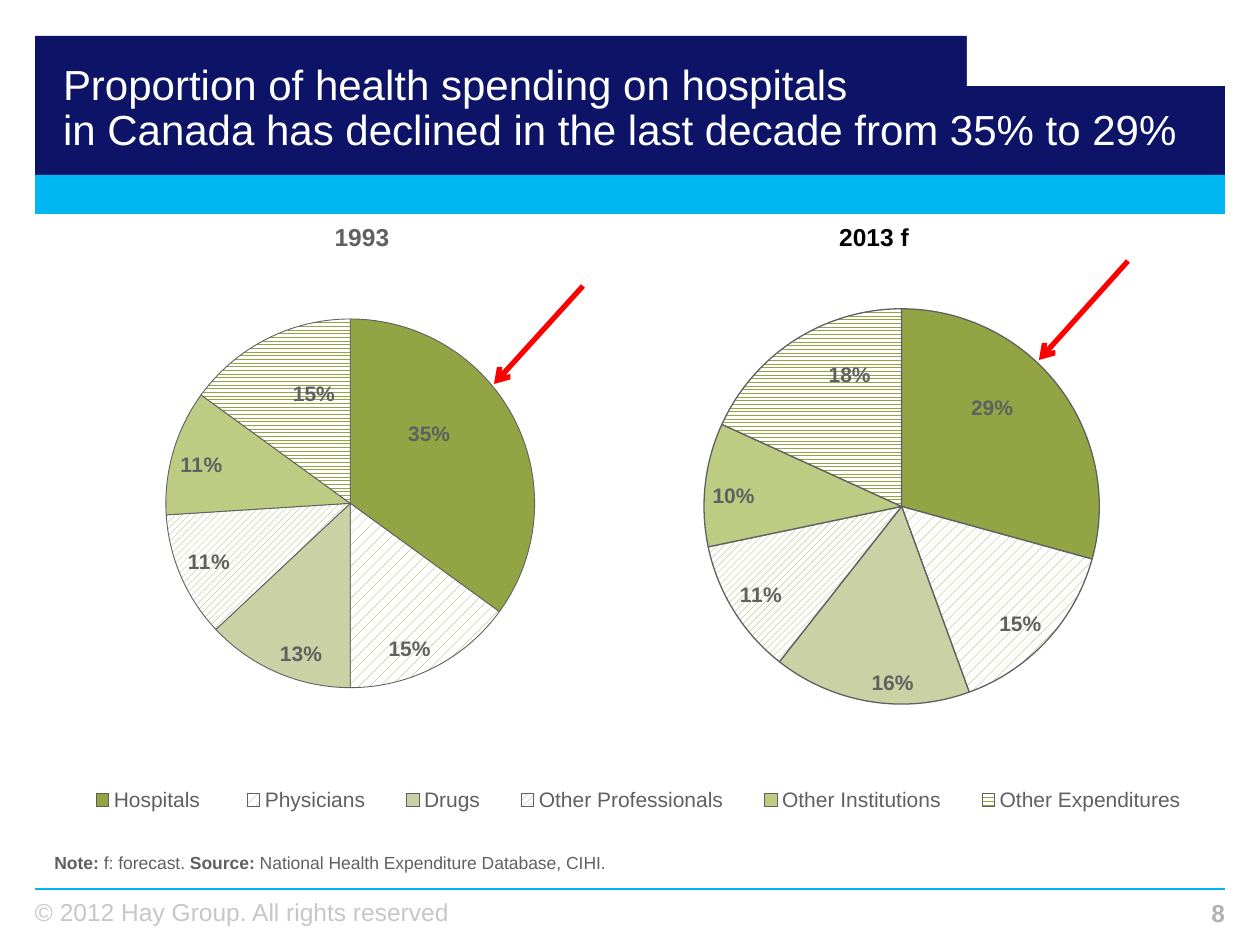
from lxml import etree
from pptx import Presentation
from pptx.chart.data import CategoryChartData
from pptx.dml.color import RGBColor
from pptx.enum.chart import XL_CHART_TYPE, XL_LABEL_POSITION, XL_LEGEND_POSITION
from pptx.enum.dml import MSO_PATTERN
from pptx.enum.shapes import MSO_CONNECTOR, MSO_SHAPE
from pptx.enum.text import MSO_ANCHOR, MSO_AUTO_SIZE, PP_ALIGN
from pptx.oxml import parse_xml
from pptx.oxml.ns import nsdecls, qn
from pptx.util import Pt

EMU_PER_PX = 914400 / 126
FONT = "Arial"

NAVY = RGBColor(0x0D, 0x14, 0x67)
CYAN = RGBColor(0x00, 0xB7, 0xF1)
WHITE = RGBColor(0xFF, 0xFF, 0xFF)
BLACK = RGBColor(0x00, 0x00, 0x00)
GREY = RGBColor(0x60, 0x60, 0x60)
PAGE_GREY = RGBColor(0xB2, 0xB2, 0xB2)
COPYRIGHT_GREY = RGBColor(0xC7, 0xC7, 0xC7)
RED = RGBColor(0xFF, 0x00, 0x00)
OLIVE = RGBColor(0x93, 0xA4, 0x45)
SOFT_OLIVE = RGBColor(0x9F, 0xAD, 0x60)
PALE_OLIVE = RGBColor(0xC9, 0xD1, 0xA5)
LIGHT_OLIVE = RGBColor(0xBD, 0xCB, 0x83)

DOTS = MSO_PATTERN.PERCENT_20
DIAGONAL = MSO_PATTERN.WIDE_UPWARD_DIAGONAL
ZIGZAG = MSO_PATTERN.ZIG_ZAG
LEFT, CENTER, RIGHT = PP_ALIGN.LEFT, PP_ALIGN.CENTER, PP_ALIGN.RIGHT
INSIDE_END = XL_LABEL_POSITION.INSIDE_END

SECTORS = ["Hospitals ", "Physicians", "Drugs", "Other Professionals",
           "Other Institutions", "Other Expenditures"]


def px(*lengths):
    return [round(length * EMU_PER_PX) for length in lengths]


def style(font, size, color, bold=False):
    font.name = FONT
    font.size = Pt(size)
    font.bold = bold
    font.color.rgb = color


def add_block(slide, box, color):
    block = slide.shapes.add_shape(MSO_SHAPE.RECTANGLE, *px(*box))
    block.shadow.inherit = False
    block.fill.solid()
    block.fill.fore_color.rgb = color
    block.line.fill.background()


def add_line(slide, ends, color, width, arrow=False):
    line = slide.shapes.add_connector(MSO_CONNECTOR.STRAIGHT, *px(*ends))
    line.line.color.rgb = color
    line.line.width = Pt(width)
    if arrow:
        etree.SubElement(line.line._get_or_add_ln(), qn("a:tailEnd"), type="arrow")
    etree.SubElement(line._element.spPr, qn("a:effectLst"))


def add_text(slide, box, parts, size, color, align=LEFT, inset=True, wrap=True):
    """Write one paragraph from (text, bold) parts."""
    frame = slide.shapes.add_textbox(*px(*box)).text_frame
    frame.word_wrap = wrap
    if not inset:
        clear_insets(frame)
    paragraph = frame.paragraphs[0]
    paragraph.alignment = align
    for text, bold in parts:
        run = paragraph.add_run()
        run.text = text
        style(run.font, size, color, bold)
    return frame


def clear_insets(frame):
    frame.margin_left = frame.margin_right = frame.margin_top = frame.margin_bottom = 0


def set_title(slide, box, text):
    title = slide.shapes.title
    title.left, title.top, title.width, title.height = px(*box)
    frame = title.text_frame
    frame.text = text
    frame.word_wrap = True
    frame.auto_size = MSO_AUTO_SIZE.NONE
    frame.vertical_anchor = MSO_ANCHOR.BOTTOM
    clear_insets(frame)
    paragraph = frame.paragraphs[0]
    paragraph.alignment = LEFT
    paragraph.line_spacing = 0.9
    style(paragraph.font, 24, WHITE)
    for run in paragraph.runs:
        style(run.font, 24, WHITE)
    # Bring the title in front of the banner
    slide.shapes._spTree.append(title._element)


def manual_layout(x, y, size=None, inner=False):
    """Lay out a chart part in fractions of the chart; without size, as an offset."""
    values = [("layoutTarget", "inner")] if inner else []
    if size:
        values += [("xMode", "edge"), ("yMode", "edge")]
    values += [("x", x), ("y", y)]
    if size:
        values += [("w", size[0]), ("h", size[1])]
    tags = "".join(f'<c:{tag} val="{value}"/>' for tag, value in values)
    return parse_xml(f'<c:layout {nsdecls("c")}><c:manualLayout>{tags}'
                     "</c:manualLayout></c:layout>")


def move_label(point, offset):
    label = point.data_label
    style(label.font, 12, GREY, True)
    label.position = INSIDE_END
    element = label._get_or_add_dLbl()
    element.find(qn("c:showVal")).set("val", "0")
    element.find(qn("c:showPercent")).set("val", "1")
    element.insert(1, manual_layout(*offset))
    element.insert(2, parse_xml(
        f'<c:numFmt {nsdecls("c")} formatCode="0%" sourceLinked="0"/>'))


def paint_slice(point, color, pattern, line_width):
    fill = point.format.fill
    if pattern is None:
        fill.solid()
        fill.fore_color.rgb = color
    else:
        fill.patterned()
        fill.pattern = pattern
        fill.fore_color.rgb = color
        fill.back_color.rgb = WHITE
    point.format.line.color.rgb = GREY
    point.format.line.width = Pt(line_width)


def add_pie(slide, box, categories, shares, plot_box, diagonal_color, line_width, offsets):
    data = CategoryChartData()
    data.categories = categories
    data.add_series("Series 1", shares)
    chart = slide.shapes.add_chart(XL_CHART_TYPE.PIE, *px(*box), data).chart
    chart.has_title = False
    chart.has_legend = False
    style(chart.font, 12, GREY)
    plot = chart.plots[0]
    plot.vary_by_categories = True

    # Slices
    series = plot.series[0]
    fills = [(OLIVE, None), (OLIVE, DOTS), (PALE_OLIVE, None),
             (diagonal_color, DIAGONAL), (LIGHT_OLIVE, None), (OLIVE, ZIGZAG)]
    for index, (color, pattern) in enumerate(fills):
        paint_slice(series.points[index], color, pattern, line_width)

    # Percent labels
    labels = series.data_labels
    labels.show_value = False
    labels.show_percentage = True
    labels.number_format = "0%"
    labels.number_format_is_linked = False
    labels.position = INSIDE_END
    style(labels.font, 12, GREY, True)
    for index, offset in offsets.items():
        move_label(series.points[index], offset)

    # Plot position
    area = chart._chartSpace.chart.plotArea
    for old in area.findall(qn("c:layout")):
        area.remove(old)
    x, y, width, height = plot_box
    area.insert(0, manual_layout(x, y, (width, height), inner=True))
    return chart


def add_legend(chart):
    chart.has_legend = True
    legend = chart.legend
    legend.position = XL_LEGEND_POSITION.BOTTOM
    legend.include_in_layout = False
    style(legend.font, 12, GREY)
    element = legend._element
    for old in element.findall(qn("c:layout")):
        element.remove(old)
    element.find(qn("c:legendPos")).addnext(manual_layout(0, 0.86, (1, 0.06)))


def main():
    deck = Presentation()
    deck.slide_width, deck.slide_height = px(1260, 945)
    slide = deck.slides.add_slide(deck.slide_layouts[5])

    # Banner and footer
    add_block(slide, (35, 36, 1190, 178), NAVY)
    add_block(slide, (35, 175, 1190, 39), CYAN)
    add_block(slide, (967, 26, 259, 60), WHITE)
    page = add_text(slide, (1195, 897, 30, 30), [("8", True)], 14, PAGE_GREY,
                    RIGHT, inset=False, wrap=False)
    page.vertical_anchor = MSO_ANCHOR.BOTTOM
    add_line(slide, (35, 889, 1225, 889), CYAN, 1.5)
    add_text(slide, (35, 897, 467, 29), [("© 2012 Hay Group. All rights reserved", False)],
             14, COPYRIGHT_GREY, inset=False)

    # Pies
    add_pie(slide, (273, 213, 998, 599), list("123456"),
            (29, 15, 16, 11, 10, 18), (0.43, 0.16, 0.4, 0.66),
            OLIVE, 0.75, {0: (-0.04, 0.01), 5: (0.03, 0.03)})
    set_title(slide, (63, 35, 1134, 120), "Proportion of health spending on hospitals \v"
              "in Canada has declined in the last decade from 35% to 29%")
    pie_1993 = add_pie(slide, (62, 244, 1153, 625), SECTORS,
                       (35, 15, 13, 11, 11, 15), (0.07, 0.12, 0.36, 0.59),
                       SOFT_OLIVE, 0.5, {0: (-0.05, 0), 5: (0.02, 0.06)})
    add_legend(pie_1993)

    # Note and years
    add_text(slide, (42, 846, 722, 34),
             [("Note: ", True), ("f: forecast. ", False), ("Source: ", True),
              ("National Health Expenditure Database, CIHI.", False)], 10, GREY)
    add_text(slide, (826, 216, 96, 43), [("2013 f", True)], 14, BLACK, CENTER, wrap=False)
    add_text(slide, (304, 216, 116, 43), [("1993", True)], 14, GREY, CENTER)

    # Arrows to the hospital slices
    for ends in ((583, 286, 494, 384), (1128, 261, 1039, 360)):
        add_line(slide, ends, RED, 3, arrow=True)

    deck.save("out.pptx")


if __name__ == "__main__":
    main()
